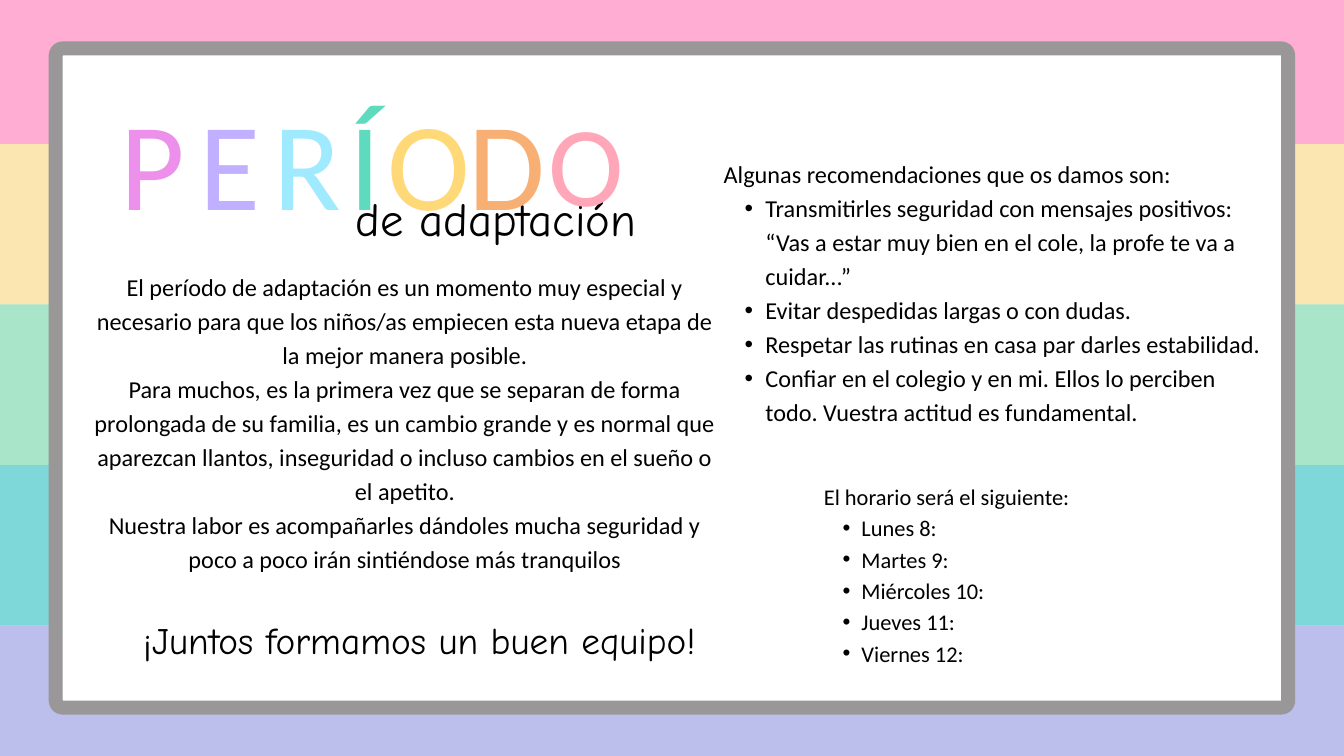
from lxml import etree
from pptx import Presentation
from pptx import util as u
from pptx.dml.color import RGBColor
from pptx.enum import shapes, text
from pptx.oxml import ns

In = u.Inches
MID, LEFT = text.PP_ALIGN.CENTER, text.PP_ALIGN.LEFT

deck = Presentation()
deck.slide_width, deck.slide_height = In(20), In(11.25)
slide = deck.slides.add_slide(deck.slide_layouts[6])


def rgb(code):
    return RGBColor.from_string(code)


def write(box, lines, size, font="Calibri", color="000000", align=MID, lead=1.4, hang=0):
    """Add a text box; with hang, every line after the first is a bullet."""
    frame = slide.shapes.add_textbox(*map(In, box)).text_frame
    form = dict(word_wrap=True, auto_size=text.MSO_AUTO_SIZE.SHAPE_TO_FIT_TEXT,
                margin_left=0, margin_right=0, margin_top=0, margin_bottom=0)
    for name, value in form.items():
        setattr(frame, name, value)
    for i, line in enumerate(lines):
        par = frame.paragraphs[0] if i == 0 else frame.add_paragraph()
        par.alignment, par.line_spacing = align, u.Pt(round(size * lead, 1))
        run = par.add_run()
        run.text = line
        for name, value in dict(name=font, size=u.Pt(size)).items():
            setattr(run.font, name, value)
        run.font.color.rgb = rgb(color)
        if hang and i:
            par.level = 1
            props = par._p.get_or_add_pPr()
            props.set("marL", str(In(2 * hang)))
            props.set("indent", str(-In(hang)))
            etree.SubElement(props, ns.qn("a:buFont")).set("typeface", "Arial")
            etree.SubElement(props, ns.qn("a:buChar")).set("char", "•")


# Pastel bands
edges = [0, 2.14, 4.53, 6.92, 9.31, 11.25]
tints = ["FF8BC0", "FADA8F", "85DAB1", "48C8CB", "A0A4E3"]
for top, end, tint in zip(edges, edges[1:], tints):
    band = slide.shapes.add_shape(shapes.MSO_SHAPE.RECTANGLE, 0, In(top), In(20), In(end - top))
    band.shadow.inherit = False
    band.fill.solid()
    band.fill.fore_color.rgb = rgb(tint)
    band.line.fill.background()
    shade = band.fill._xPr.find(".//" + ns.qn("a:srgbClr"))
    etree.SubElement(shade, ns.qn("a:alpha")).set("val", "70000")

# White board with grey frame
board = slide.shapes.add_shape(shapes.MSO_SHAPE.ROUNDED_RECTANGLE,
                               In(0.83), In(0.72), In(18.34), In(9.81))
board.adjustments[0] = 0.01
board.shadow.inherit = False
board.fill.solid()
board.fill.fore_color.rgb = rgb("FFFFFF")
board.line.color.rgb = rgb("999797")
board.line.width = u.Pt(15)

# Subtitle and closing line
write((4.61, 2.68, 5.54, 0.94), ["de adaptación"], 50, "Comic Neue")
write((1.52, 9.08, 9.44, 0.73), ["¡Juntos formamos un buen equipo!"], 40, "Comic Neue")

# Title, one letter per box
title = [
    ("P", 1.73, 1.08, "ED90EC"), ("E", 2.8, 1.25, "C1AFFF"), ("R", 3.9, 1.36, "9FEAFF"),
    ("Í", 5.15, 0.58, "5EDABF"), ("O", 5.76, 1.12, "FFD978"), ("D", 6.91, 1.27, "F8AF74"),
]
for mark, left, wide, tint in title:
    write((left, 0.91, wide, 2.45), [mark], 133.8, color=tint)
write((8.16, 1.04, 0.99, 2.22), ["O"], 122, color="FFA6B9")

# Introduction
write((1.28, 3.98, 9.49, 4.49), [
    "El período de adaptación es un momento muy especial y necesario para que los niños/as "
    "empiecen esta nueva etapa de la mejor manera posible.",
    "Para muchos, es la primera vez que se separan de forma prolongada de su familia, es un "
    "cambio grande y es normal que aparezcan llantos, inseguridad o incluso cambios en el "
    "sueño o el apetito.",
    "Nuestra labor es acompañarles dándoles mucha seguridad y poco a poco irán sintiéndose "
    "más tranquilos",
], 26)

# Advice
write((10.77, 2.3, 8.04, 4.49), [
    "Algunas recomendaciones que os damos son:",
    "Transmitirles seguridad con mensajes positivos: “Vas a estar muy bien en el cole, la "
    "profe te va a cuidar...”",
    "Evitar despedidas largas o con dudas.",
    "Respetar las rutinas en casa par darles estabilidad.",
    "Confiar en el colegio y en mi. Ellos lo perciben todo. Vuestra actitud es fundamental.",
], 26, align=LEFT, hang=0.31)

# Timetable
days = ["Lunes", "Martes", "Miércoles", "Jueves", "Viernes"]
write((12.26, 7.12, 7.5, 3.2),
      ["El horario será el siguiente:"] + [f"{day} {n}:" for n, day in enumerate(days, 8)],
      24, align=LEFT, hang=0.28)

deck.save("out.pptx")
